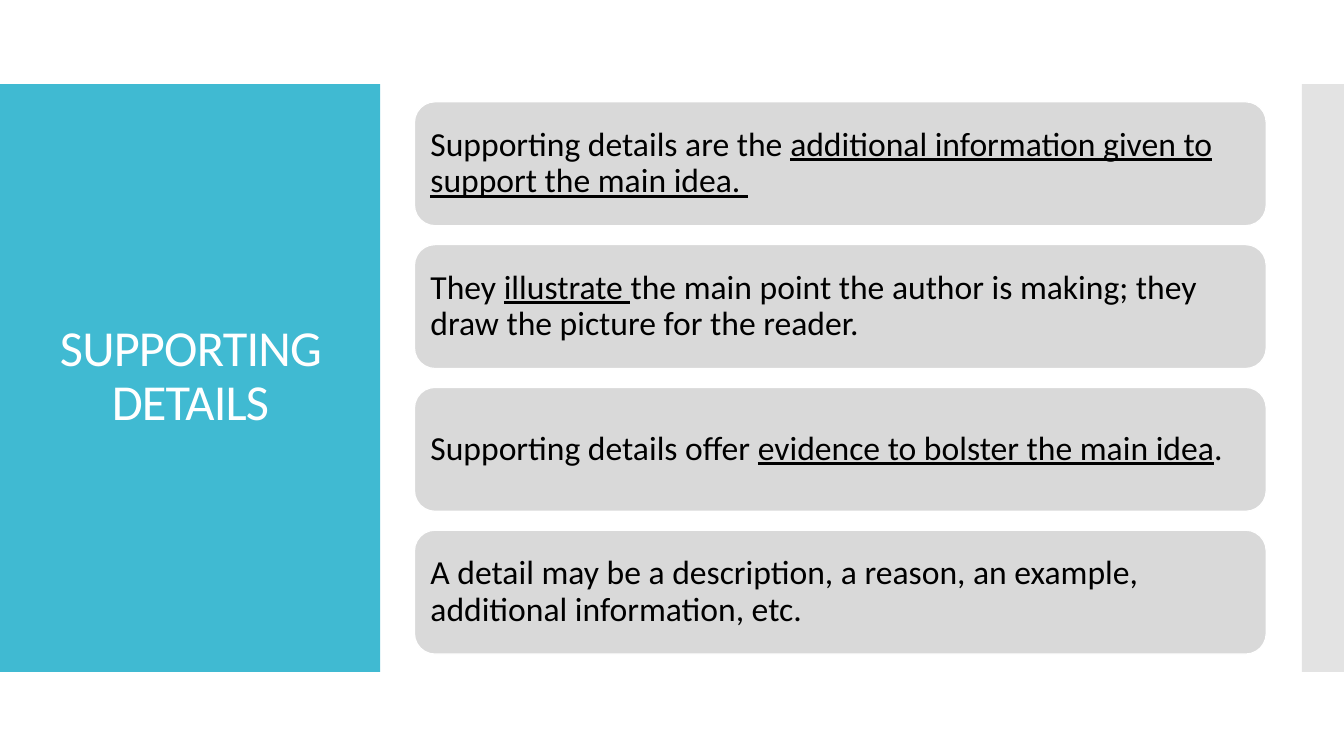
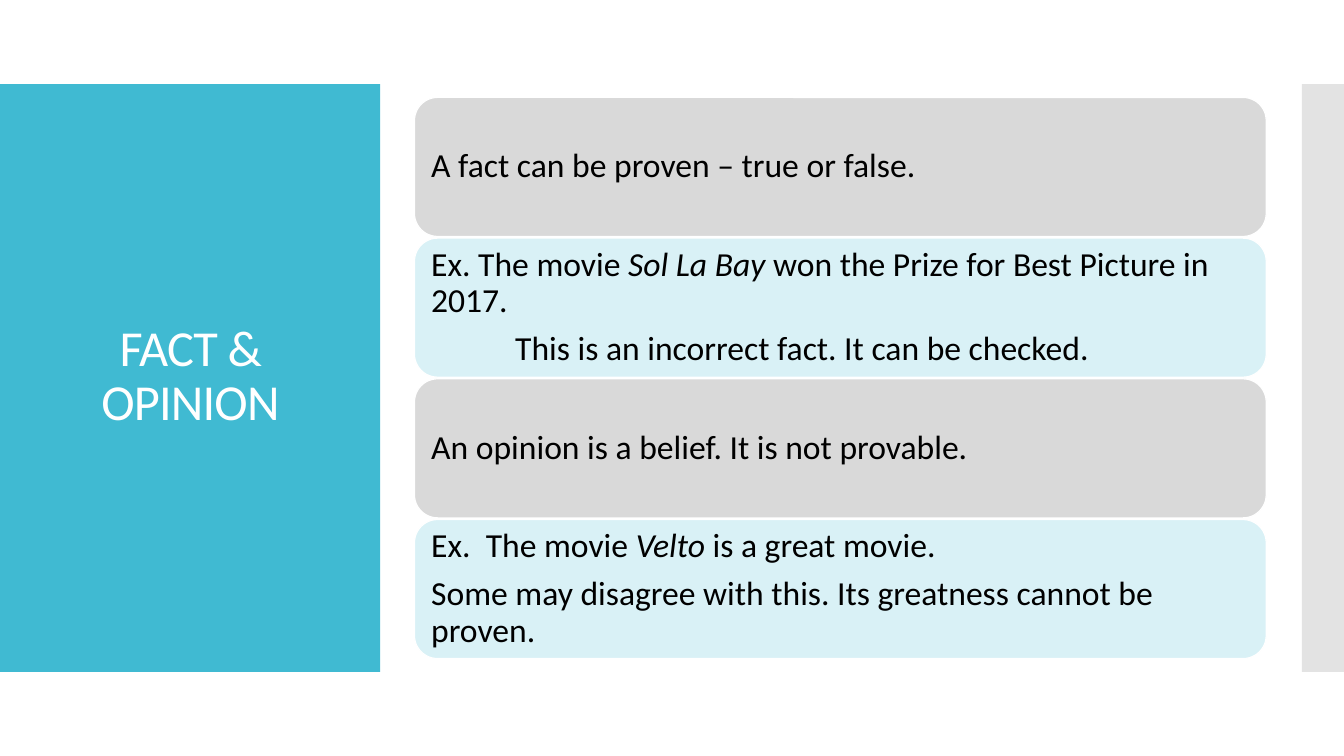
from lxml import etree
from pptx import Presentation
from pptx import util as u
from pptx.dml.color import RGBColor
from pptx.enum import shapes, text
from pptx.oxml.ns import qn

COLUMNS, ROWS = 32, 18
COLORS = {"band": "40BAD2", "strip": "C8C8C8", "point": "D9D9D9",
          "example": "D9F1F6", "white": "FFFFFF", "ink": "000000"}
TITLE = {"size": u.Pt(36), "name": "Calibri"}
BODY = {"size": u.Pt(24), "name": "Calibri"}
UNDERLINE = {"underline": True}
ITALIC = {"italic": True}


class Deck:
    """Holds the style and the current slide; lengths are grid columns and rows."""

    def __init__(self):
        self.deck = Presentation()
        self.deck.slide_width, self.deck.slide_height = u.Inches(13.333), u.Inches(7.5)
        self.column = self.deck.slide_width / COLUMNS
        self.row = self.deck.slide_height / ROWS
        self.page = None

    def place(self, left, top, width, height):
        return [round(length) for length in (left * self.column, top * self.row,
                                             width * self.column, height * self.row)]

    def add_page(self, title):
        self.page = self.deck.slides.add_slide(self.deck.slide_layouts[6])
        self.shape("RECTANGLE", "band", 0, 2, 9.05, 14)
        strip = self.shape("RECTANGLE", "strip", 31, 2, 1, 14)
        color = strip.fill._xPr.find(".//" + qn("a:srgbClr"))
        etree.SubElement(color, qn("a:alpha"), val="50000")
        self.title(title)

    def shape(self, kind, color, *area):
        shape = self.page.shapes.add_shape(shapes.MSO_SHAPE[kind], *self.place(*area))
        shape.shadow.inherit = False
        shape.fill.solid()
        shape.fill.fore_color.rgb = RGBColor.from_string(COLORS[color])
        shape.line.fill.background()
        return shape

    def span(self, para, words, color, style):
        span = para.add_run()
        span.text = words
        span.font.color.rgb = RGBColor.from_string(COLORS[color])
        for name, value in style.items():
            setattr(span.font, name, value)
        return span

    def title(self, words):
        box = self.page.shapes.add_textbox(*self.place(0.67, 2.95, 7.73, 12.07))
        frame = box.text_frame
        frame.word_wrap = True
        frame.vertical_anchor = text.MSO_ANCHOR.MIDDLE
        para = frame.paragraphs[0]
        para.alignment = text.PP_ALIGN.CENTER
        para.line_spacing = 0.9
        span = self.span(para, words, "white", TITLE)
        span.font._element.set("spc", "-60")

    def card(self, color, top, height, paras):
        """Each para is (indent in columns, [(words, style), ...])."""
        card = self.shape("ROUNDED_RECTANGLE", color, 9.87, top, 20.28, height)
        card.line.color.rgb = RGBColor.from_string(COLORS["white"])
        card.line.width = u.Pt(0.85)
        frame = card.text_frame
        frame.word_wrap = True
        frame.vertical_anchor = text.MSO_ANCHOR.MIDDLE
        for side in ("left", "right", "top", "bottom"):
            setattr(frame, f"margin_{side}", u.Inches(0.1))
        for index, (indent, spans) in enumerate(paras):
            para = frame.add_paragraph() if index else frame.paragraphs[0]
            para.alignment = text.PP_ALIGN.LEFT
            para.line_spacing = 0.9
            para.space_after = u.Pt(8.4)
            para._p.get_or_add_pPr().set("marL", str(round(indent * self.column)))
            for words, style in spans:
                self.span(para, words, "ink", {**BODY, **style})

    def stack(self, height, gap, cards):
        """Centres equal cards, given as (color, paras), on the slide's height."""
        pitch = height + gap
        top = (ROWS - len(cards) * pitch + gap) / 2
        for index, (color, paras) in enumerate(cards):
            self.card(color, top + index * pitch, height, paras)


DETAILS = [
    [("Supporting details are the ", {}),
     ("additional information given to support the main idea. ", UNDERLINE)],
    [("They ", {}), ("illustrate ", UNDERLINE),
     ("the main point the author is making; they draw the picture for the reader.", {})],
    [("Supporting details offer ", {}),
     ("evidence to bolster the main idea", UNDERLINE), (".", {})],
    [("A detail may be a description, a reason, an example, "
      "additional information, etc.", {})],
]
FACT_AND_OPINION = [
    ("point", [(0, [("A fact can be proven – true or false.", {})])]),
    ("example", [
        (0, [("Ex. The movie ", {}), ("Sol La Bay ", ITALIC),
             ("won the Prize for Best Picture in 2017.", {})]),
        (2, [("This is an incorrect fact. It can be checked.", {})])]),
    ("point", [(0, [("An opinion is a belief. It is not provable.", {})])]),
    ("example", [
        (0, [("Ex.  The movie ", {}), ("Velto", ITALIC), (" is a great movie.", {})]),
        (0, [("Some may disagree with this. Its greatness cannot be proven.", {})])]),
]


def main():
    show = Deck()
    show.add_page("SUPPORTING DETAILS")
    show.stack(2.95, 0.45, [("point", [(0, spans)]) for spans in DETAILS])
    show.add_page("FACT & OPINION")
    show.stack(3.31, 0.04, FACT_AND_OPINION)
    show.deck.save("out.pptx")


if __name__ == "__main__":
    main()
